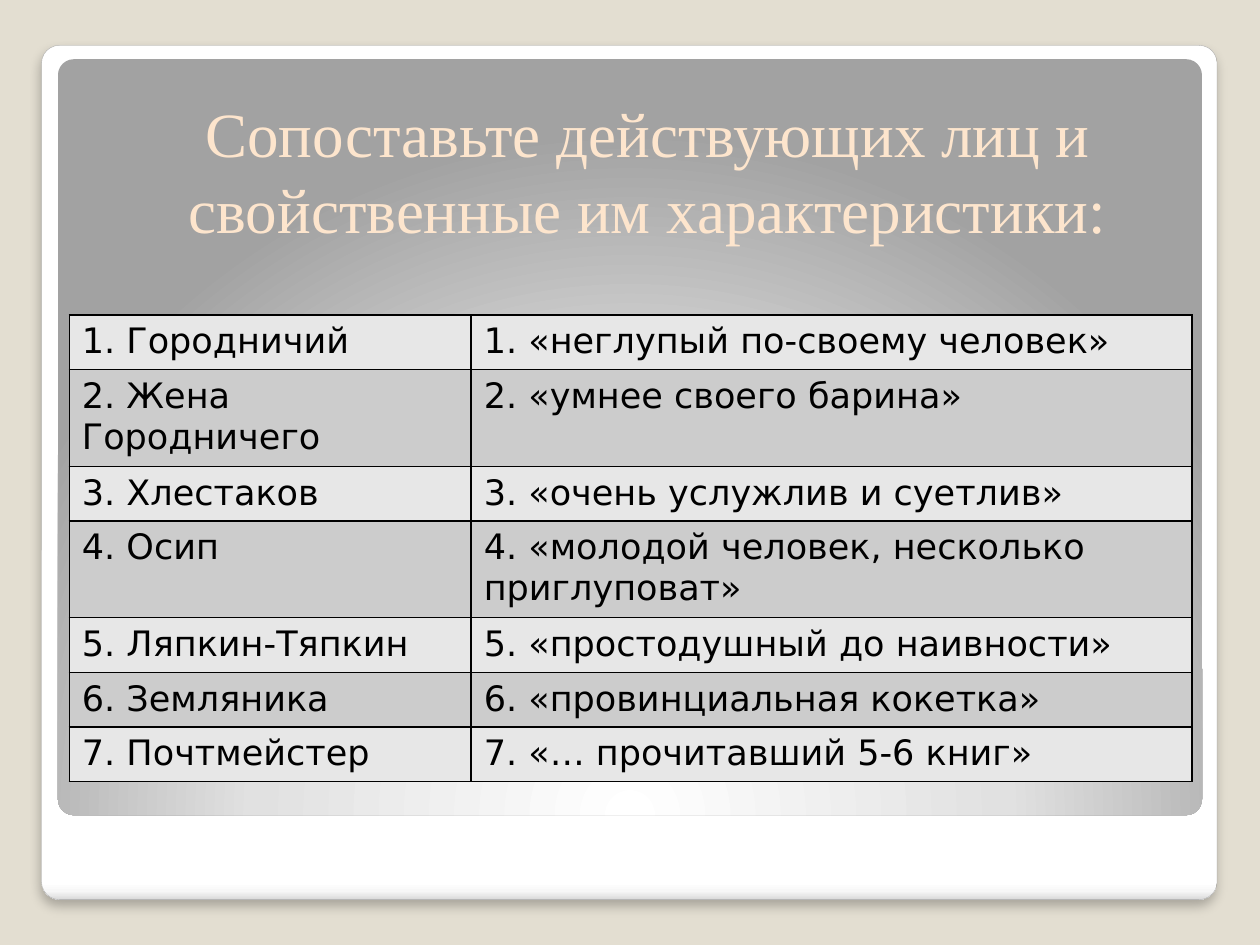
from dataclasses import dataclass

from lxml.etree import SubElement
from pptx import Presentation
from pptx.dml.color import RGBColor
from pptx.enum.shapes import MSO_SHAPE
from pptx.enum.text import MSO_ANCHOR, PP_ALIGN
from pptx.oxml import parse_xml
from pptx.oxml.ns import nsdecls, qn
from pptx.util import Emu, Pt

EMU_PER_PX = 9144  # 100 px to the inch
STRIPES = ("E7E7E7", "CCCCCC")
LINEAR_DOWN = '<a:lin ang="5400000" scaled="0"/>'
GLOW_FROM_BELOW = (
    '<a:path path="circle">'
    '<a:fillToRect l="50000" t="175000" r="50000" b="-75000"/></a:path>'
)
CARD_SHADOW = (
    '<a:outerShdw blurRad="76200" dist="50800" dir="5400000" algn="tl" rotWithShape="0">'
    '<a:srgbClr val="000000"><a:alpha val="25000"/></a:srgbClr></a:outerShdw>'
)


@dataclass(frozen=True)
class Panel:
    box: tuple[int, int, int, int]
    stops: tuple[tuple[int, str], ...]
    direction: str
    line: str = ""
    shadow: str = ""


@dataclass(frozen=True)
class Match:
    person: str
    trait: str
    height: int = 43


PANELS = (
    Panel((33, 36, 933, 678),
          ((0, "FFFFFF"), (98, "FFFFFF"), (99, "F7F7F7"), (100, "DADADA")),
          LINEAR_DOWN, line="A4A4A4", shadow=CARD_SHADOW),
    Panel((46, 47, 908, 600),
          ((0, "FFFFFF"), (55, "E1E1E1"), (100, "A2A2A2")),
          GLOW_FROM_BELOW),
)
MATCHES = (
    Match("1. Городничий", "1. «неглупый по-своему человек»"),
    Match("2. Жена Городничего", "2. «умнее своего барина»"),
    Match("3. Хлестаков", "3. «очень услужлив и суетлив»"),
    Match("4. Осип", "4. «молодой человек, несколько приглуповат»", 50),
    Match("5. Ляпкин-Тяпкин", "5. «простодушный до наивности»"),
    Match("6. Земляника", "6. «провинциальная кокетка»"),
    Match("7. Почтмейстер", "7. «… прочитавший 5-6 книг»"),
)
COLUMN_WIDTHS = (319, 572)


def px(length: int) -> Emu:
    return Emu(length * EMU_PER_PX)


def color(value: str) -> RGBColor:
    return RGBColor.from_string(value)


def line_xml(tag: str, points: float, value: str):
    return parse_xml(
        f'<a:{tag} {nsdecls("a")} w="{int(Pt(points))}">'
        f'<a:solidFill><a:srgbClr val="{value}"/></a:solidFill></a:{tag}>'
    )


def add_run(paragraph, text: str, size: int, font: str, value: str):
    run = paragraph.add_run()
    run.text = text
    run.font.size = Pt(size)
    run.font.name = font
    run.font.color.rgb = color(value)
    return run


def add_panel(slide, panel: Panel) -> None:
    shape = slide.shapes.add_shape(MSO_SHAPE.ROUNDED_RECTANGLE, *map(px, panel.box))
    shape.adjustments[0] = 0.021
    shape.shadow.inherit = False
    if panel.line:
        shape.line.color.rgb = color(panel.line)
        shape.line.width = Pt(0.16)
    else:
        shape.line.fill.background()

    stops = "".join(
        f'<a:gs pos="{position * 1000}"><a:srgbClr val="{value}"/></a:gs>'
        for position, value in panel.stops
    )
    properties = shape.element.spPr
    properties.find(qn("a:prstGeom")).addnext(parse_xml(
        f'<a:gradFill {nsdecls("a")} rotWithShape="1">'
        f"<a:gsLst>{stops}</a:gsLst>{panel.direction}</a:gradFill>"
    ))
    if panel.shadow:
        effects = properties.find(qn("a:effectLst"))
        properties.replace(effects, parse_xml(
            f'<a:effectLst {nsdecls("a")}>{panel.shadow}</a:effectLst>'
        ))


def add_title(slide, text: str) -> None:
    title = slide.shapes.add_textbox(px(47), px(86), px(934), px(114))
    frame = title.text_frame
    frame.word_wrap = True
    frame.vertical_anchor = MSO_ANCHOR.BOTTOM
    paragraph = frame.paragraphs[0]
    paragraph.alignment = PP_ALIGN.CENTER
    run = add_run(paragraph, text, 36, "Times New Roman", "FDE5CD")
    run.font.fill.solid()
    run.font.color.rgb = color("FDE5CD")
    run.font._element.insert(0, line_xml("ln", 0.8, "F07F09"))


def fill_cell(cell, text: str, background: str) -> None:
    add_run(cell.text_frame.paragraphs[0], text, 20, "DejaVu Sans", "000000")
    cell.fill.solid()
    cell.fill.fore_color.rgb = color(background)
    properties = cell._tc.get_or_add_tcPr()
    for index, side in enumerate(("lnL", "lnR", "lnT", "lnB")):
        properties.insert(index, line_xml(side, 1, "000000"))


def add_matches(slide, matches: tuple[Match, ...]) -> None:
    table = slide.shapes.add_table(
        len(matches), len(COLUMN_WIDTHS), px(55), px(250),
        px(sum(COLUMN_WIDTHS)), px(sum(match.height for match in matches)),
    ).table
    table.first_row = False
    for column, width in zip(table.columns, COLUMN_WIDTHS):
        column.width = px(width)
    for index, (row, match) in enumerate(zip(table.rows, matches)):
        row.height = px(match.height)
        for cell, text in zip(row.cells, (match.person, match.trait)):
            fill_cell(cell, text, STRIPES[index % 2])


def main() -> None:
    presentation = Presentation()
    presentation.slide_width, presentation.slide_height = px(1000), px(750)
    slide = presentation.slides.add_slide(presentation.slide_layouts[6])

    # Background and framed panels
    slide.background.fill.solid()
    slide.background.fill.fore_color.rgb = color("E3DED1")
    for panel in PANELS:
        add_panel(slide, panel)

    # Task and table of characters
    add_title(slide, "Сопоставьте действующих лиц и свойственные им характеристики:")
    add_matches(slide, MATCHES)

    presentation.save("out.pptx")


if __name__ == "__main__":
    main()
